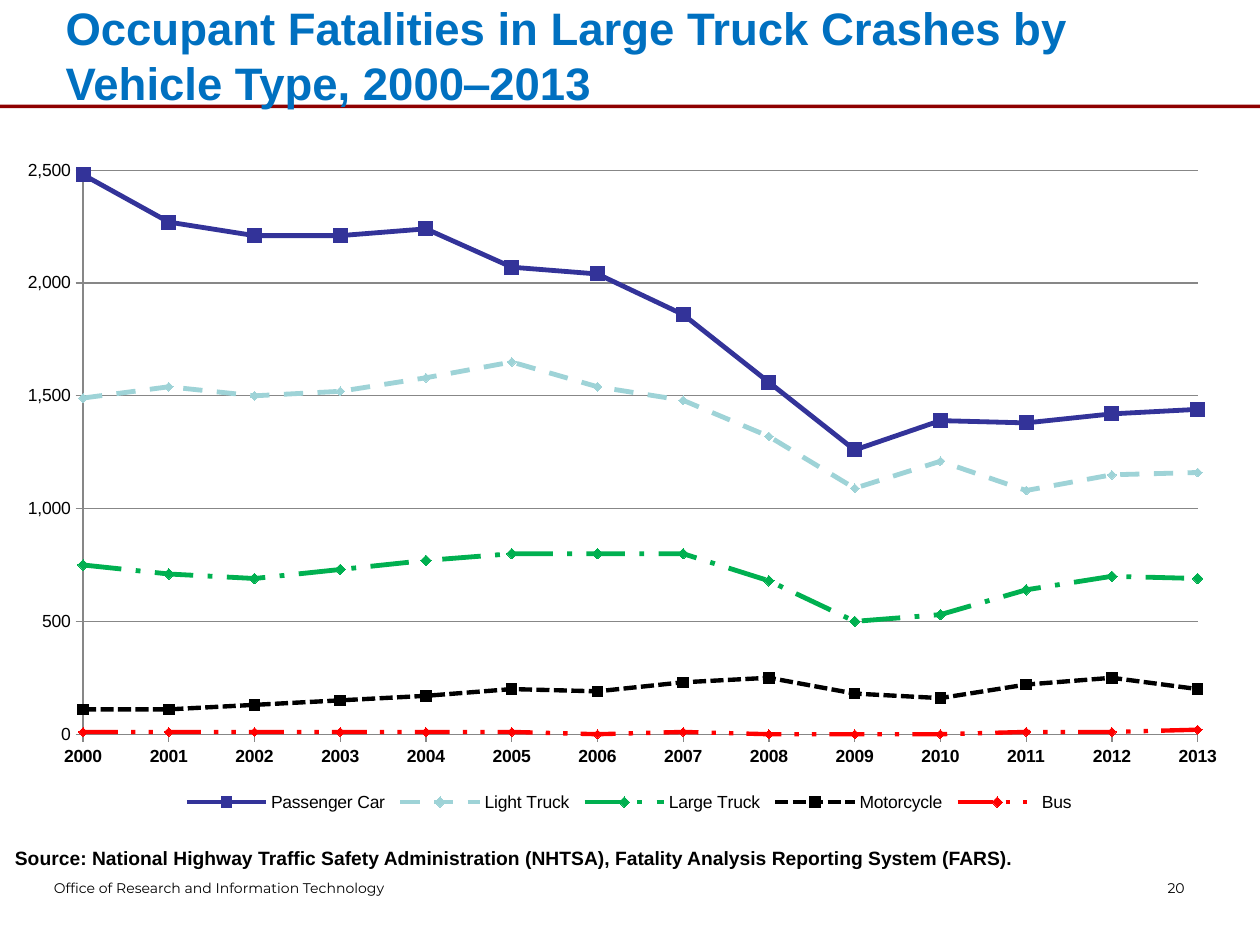
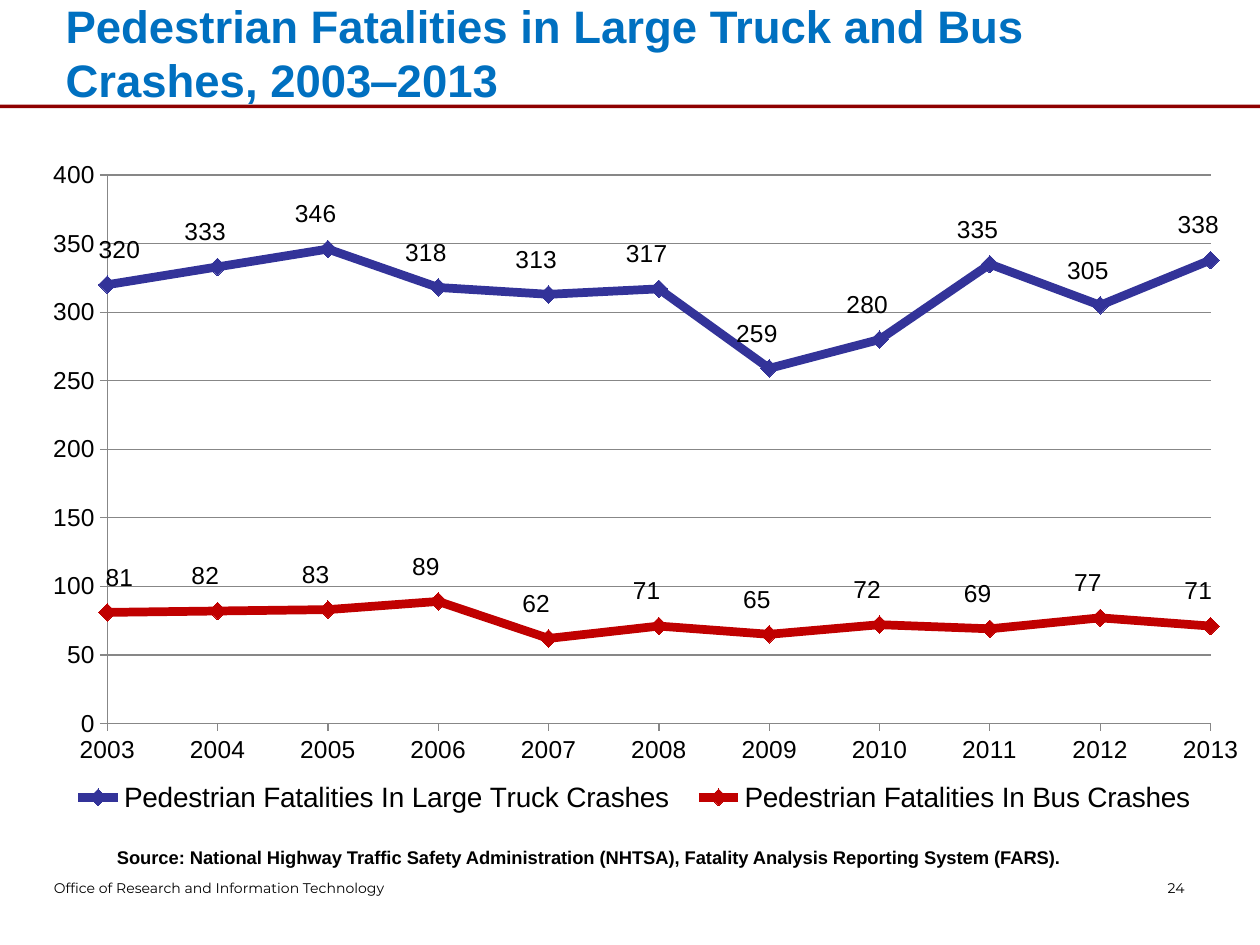
from lxml import etree
from pptx import Presentation
from pptx import util as u
from pptx.chart.data import CategoryChartData
from pptx.dml.color import RGBColor
from pptx.enum import chart as ch, dml, shapes, text
from pptx.oxml.ns import qn

BLUE = RGBColor(0x00, 0x70, 0xC0)
MAROON = RGBColor(0x8E, 0x00, 0x00)
BLACK = RGBColor(0x00, 0x00, 0x00)
GRAY = RGBColor(0x87, 0x87, 0x87)
NAVY = RGBColor(0x33, 0x33, 0x99)
AQUA = RGBColor(0x9E, 0xD3, 0xD7)
GREEN = RGBColor(0x00, 0xB0, 0x50)
RED = RGBColor(0xFF, 0x00, 0x00)
CRIMSON = RGBColor(0xC0, 0x00, 0x00)

OFFICE = "Office of Research and Information Technology"
SOURCE = ("Source: National Highway Traffic Safety Administration (NHTSA), "
          "Fatality Analysis Reporting System (FARS).")

SQUARE, DIAMOND = ch.XL_MARKER_STYLE.SQUARE, ch.XL_MARKER_STYLE.DIAMOND
DASH = dml.MSO_LINE

OCCUPANTS = [
    ("Passenger Car", NAVY, 2.75, None, SQUARE, 8,
     (2480, 2270, 2210, 2210, 2240, 2070, 2040, 1860, 1560, 1260, 1390, 1380, 1420, 1440)),
    ("Light Truck", AQUA, 2.75, DASH.DASH, DIAMOND, 5,
     (1490, 1540, 1500, 1520, 1580, 1650, 1540, 1480, 1320, 1090, 1210, 1080, 1150, 1160)),
    ("Large Truck", GREEN, 2.75, DASH.LONG_DASH_DOT, DIAMOND, 6,
     (750, 710, 690, 730, 770, 800, 800, 800, 680, 500, 530, 640, 700, 690)),
    ("Motorcycle", BLACK, 2.5, DASH.SQUARE_DOT, SQUARE, 6,
     (110, 110, 130, 150, 170, 200, 190, 230, 250, 180, 160, 220, 250, 200)),
    ("Bus", RED, 2.5, DASH.DASH_DOT_DOT, DIAMOND, 5,
     (10, 10, 10, 10, 10, 10, 0, 10, 0, 0, 0, 10, 10, 20)),
]
PEDESTRIANS = [
    ("Pedestrian Fatalities In Large Truck Crashes", NAVY, 5, None, DIAMOND, 10,
     (320, 333, 346, 318, 313, 317, 259, 280, 335, 305, 338)),
    ("Pedestrian Fatalities In Bus Crashes", CRIMSON, 5, None, DIAMOND, 10,
     (81, 82, 83, 89, 62, 71, 65, 72, 69, 77, 71)),
]


def inches(box):
    """Turn a box of numbers into lengths."""
    return [u.Inches(n) for n in box]


def add_run(p, words, size, color=BLACK, name="Arial", bold=False):
    """Append one formatted run to a paragraph."""
    r = p.add_run()
    r.text = words
    r.font.size, r.font.name, r.font.bold = u.Pt(size), name, bold
    r.font.color.rgb = color


def add_text(slide, box, words, size, anchor=text.MSO_ANCHOR.TOP, align=None, **style):
    """Add a wrapped one-line text box."""
    tf = slide.shapes.add_textbox(*inches(box)).text_frame
    tf.word_wrap, tf.vertical_anchor = True, anchor
    p = tf.paragraphs[0]
    p.alignment = align
    add_run(p, words, size, **style)


def add_frame(prs, title, top, number):
    """Start a slide with its title, band, footer and number."""
    slide = prs.slides.add_slide(prs.slide_layouts[5])
    sp = slide.shapes.title
    sp.left, sp.top, sp.width, sp.height = inches((0.42, top, 9.42, 0.83))
    tf = sp.text_frame
    tf.auto_size, tf.word_wrap = text.MSO_AUTO_SIZE.NONE, True
    tf.vertical_anchor = text.MSO_ANCHOR.MIDDLE
    p = tf.paragraphs[0]
    p.alignment = text.PP_ALIGN.LEFT
    add_run(p, title, 26, BLUE, bold=True)

    band = slide.shapes.add_shape(shapes.MSO_SHAPE.RECTANGLE, *inches((-0.01, 0.83, 10.01, 0.03)))
    band.shadow.inherit = False
    band.fill.solid()
    band.fill.fore_color.rgb = MAROON
    band.line.fill.background()
    sp._element.addprevious(band._element)

    add_text(slide, (8.92, 6.93, 0.83, 0.24), str(number), 8,
             align=text.PP_ALIGN.CENTER, name="Montserrat")
    add_text(slide, (0.33, 6.93, 5.5, 0.24), OFFICE, 8,
             anchor=text.MSO_ANCHOR.MIDDLE, name="Montserrat")
    return slide


def set_layout(parent, index, inner=False, modes=True, **place):
    """Place a chart part by fractions of the chart area."""
    for old in parent.findall(qn("c:layout")):
        parent.remove(old)
    layout = etree.Element(qn("c:layout"))
    manual = etree.SubElement(layout, qn("c:manualLayout"))
    if inner:
        etree.SubElement(manual, qn("c:layoutTarget")).set("val", "inner")
    if modes:
        for mode in ("xMode", "yMode"):
            etree.SubElement(manual, qn(f"c:{mode}")).set("val", "edge")
    for key, value in place.items():
        etree.SubElement(manual, qn(f"c:{key}")).set("val", str(value))
    parent.insert(index, layout)


def style_axis(axis, size, bold=False):
    """Give an axis its line, ticks and label font."""
    axis.format.line.color.rgb = GRAY
    axis.format.line.width = u.Pt(0.75)
    axis.major_tick_mark = ch.XL_TICK_MARK.OUTSIDE
    axis.minor_tick_mark = ch.XL_TICK_MARK.NONE
    axis.tick_labels.font.size, axis.tick_labels.font.bold = u.Pt(size), bold


def style_series(ser, color, width, dash, marker, size):
    """Colour a line and its markers."""
    ser.smooth = False
    line = ser.format.line
    line.color.rgb, line.width = color, u.Pt(width)
    if dash:
        line.dash_style = dash
    ser.marker.style, ser.marker.size = marker, size
    ser.marker.format.fill.solid()
    ser.marker.format.fill.fore_color.rgb = color
    ser.marker.format.line.color.rgb = color


def label_points(ser, count):
    """Show each value above its point, shifted inward at the left edge."""
    for i in range(count):
        label = ser.points[i].data_label
        label.font.size = u.Pt(14)
        label.position = ch.XL_LABEL_POSITION.ABOVE
    for i, node in enumerate(ser._element.iter(qn("c:dLbl"))):
        set_layout(node, 1, modes=False, x=-0.01 if i else 0.01, y=-0.01)


def add_line_chart(slide, box, first_year, rows, top, step, plot, legend,
                   size=10, legend_size=10, bold_years=False, labels=False):
    """Add a line chart of yearly fatalities."""
    data = CategoryChartData(number_format="#,##0")
    data.categories = [str(year) for year in range(first_year, 2014)]
    for name, *_, values in rows:
        data.add_series(name, values)
    chart = slide.shapes.add_chart(ch.XL_CHART_TYPE.LINE_MARKERS, *inches(box), data).chart
    chart.has_title = False
    chart.font.size, chart.font.name = u.Pt(10), "Arial"
    chart.font.color.rgb = BLACK
    chart.plots[0].vary_by_categories = False

    style_axis(chart.category_axis, size, bold_years)
    axis = chart.value_axis
    style_axis(axis, size)
    axis.minimum_scale, axis.maximum_scale, axis.major_unit = 0, top, step
    axis.has_major_gridlines = True
    axis.major_gridlines.format.line.color.rgb = GRAY
    axis.major_gridlines.format.line.width = u.Pt(0.75)
    axis.tick_labels.number_format = "#,##0"
    axis.tick_labels.number_format_is_linked = False
    between = axis._element.find(qn("c:crossBetween"))
    if between is None:
        between = etree.Element(qn("c:crossBetween"))
        axis._element.find(qn("c:crosses")).addnext(between)
    between.set("val", "midCat")

    for ser, (_, *style, values) in zip(chart.plots[0].series, rows):
        style_series(ser, *style)
        if labels:
            label_points(ser, len(values))

    chart.has_legend = True
    chart.legend.position = ch.XL_LEGEND_POSITION.BOTTOM
    chart.legend.include_in_layout = False
    chart.legend.font.size = u.Pt(legend_size)
    set_layout(chart.legend._element, 1, **legend)
    set_layout(chart._chartSpace.chart.plotArea, 0, inner=True, **plot)


def occupant_slide(prs):
    """Build the slide on occupants by vehicle type."""
    slide = add_frame(prs, "Occupant Fatalities in Large Truck Crashes by Vehicle Type, 2000‒2013",
                      0.02, 20)
    add_line_chart(slide, (0.03, 1.17, 9.83, 5.33), 2000, OCCUPANTS, 2500, 500,
                   plot=dict(x=0.064, y=0.034, w=0.9, h=0.84),
                   legend=dict(x=0.14, y=0.95, w=0.73, h=0.05), bold_years=True)
    add_text(slide, (0.02, 6.67, 9.08, 0.29), SOURCE, 11, bold=True)


def pedestrian_slide(prs):
    """Build the slide on pedestrians."""
    slide = add_frame(prs, "Pedestrian Fatalities in Large Truck and Bus Crashes, 2003‒2013", 0, 24)
    add_text(slide, (0.83, 6.67, 8.42, 0.28), SOURCE, 10.5, bold=True)
    add_line_chart(slide, (0.17, 0.98, 9.73, 5.69), 2003, PEDESTRIANS, 400, 50,
                   plot=dict(x=0.07, y=0.072, w=0.9, h=0.765),
                   legend=dict(x=0.03, y=0.91, w=0.94, h=0.06),
                   size=14, legend_size=16, labels=True)


def main():
    """Build and save the slides."""
    prs = Presentation()
    prs.slide_width, prs.slide_height = inches((10, 7.5))
    occupant_slide(prs)
    pedestrian_slide(prs)
    prs.save("out.pptx")


if __name__ == "__main__":
    main()
